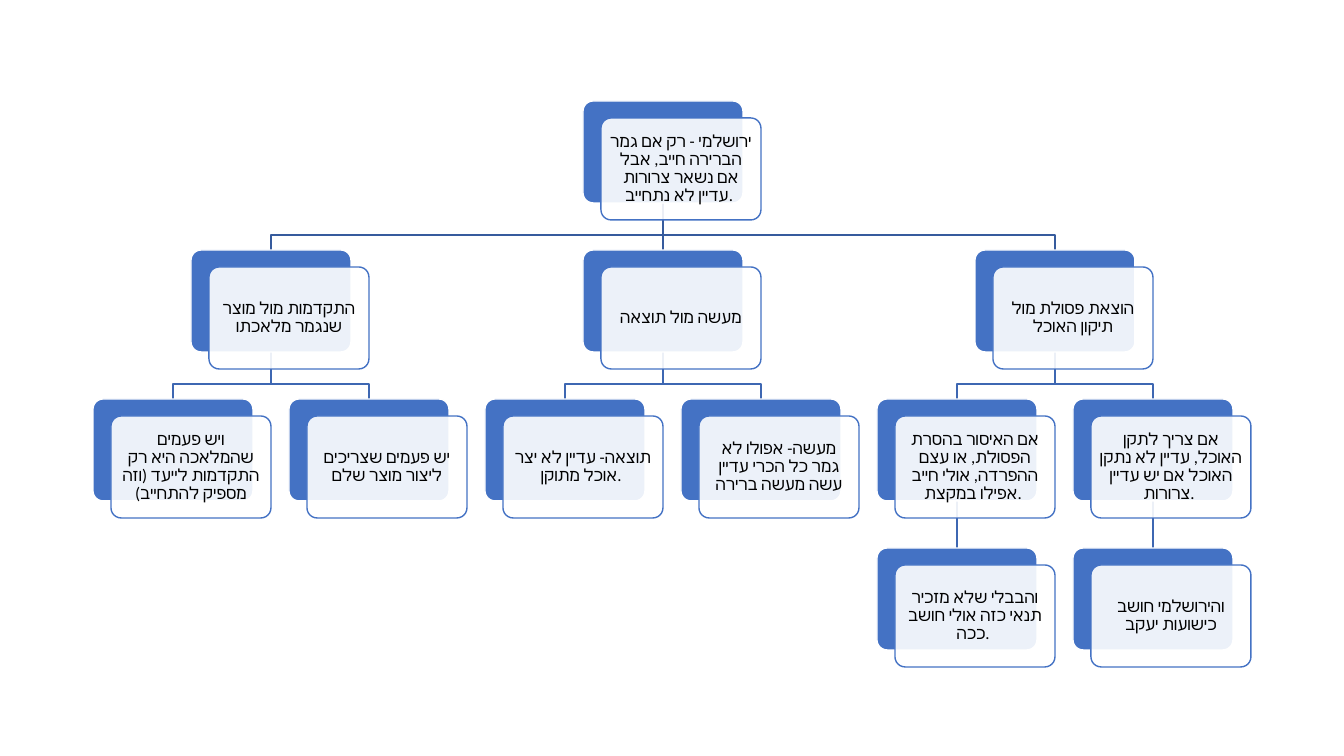
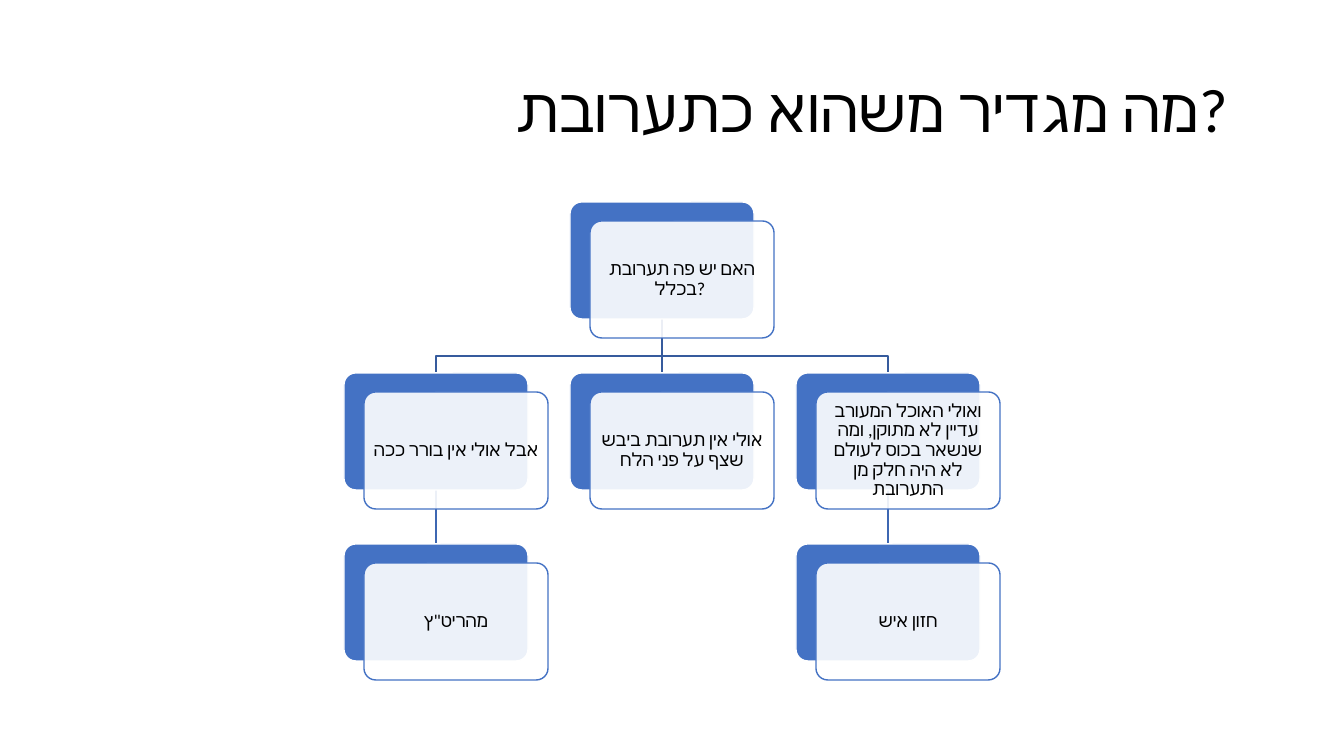
from dataclasses import dataclass

from lxml.etree import SubElement
from pptx import Presentation
from pptx.dml.color import RGBColor as RGB
from pptx.enum.shapes import MSO_CONNECTOR as LINE, MSO_SHAPE as SHAPE
from pptx.enum.text import MSO_ANCHOR as ANCHOR, MSO_AUTO_SIZE as FIT, PP_ALIGN as ALIGN
from pptx.oxml.ns import qn
from pptx.util import Emu, Pt

SCALE = 914400 / 100.8  # EMU in one px


@dataclass(frozen=True)
class Theme:
    font: str = "Calibri"
    title_size: int = 44
    text: str = "000000"
    white: str = "FFFFFF"
    accent: str = "4472C4"
    first_link: str = "365B9D"
    deep_link: str = "3E67B2"
    front_opacity: int = 90
    line: int = 1
    corner: float = 0.1
    inset: int = 5
    spacing: float = 0.9


@dataclass(frozen=True)
class Grid:
    """Places of the boxes in px; bend is how far below a box its links turn."""
    left: int
    top: int
    width: int
    height: int
    col_step: int
    row_step: int
    shift: tuple
    bend: int
    size: int


THEME = Theme()

# Each node is (text, children), children from left to right.
LIABILITY = ("ירושלמי - רק אם גמר הברירה חייב, אבל אם נשאר צרורות עדיין לא נתחייב. ", [
    ("התקדמות מול מוצר שנגמר מלאכתו", [
        ("ויש פעמים שהמלאכה היא רק התקדמות לייעד (וזה מספיק להתחייב)", []),
        ("יש פעמים שצריכים ליצור מוצר שלם", []),
    ]),
    ("מעשה מול תוצאה", [
        ("תוצאה- עדיין לא יצר אוכל מתוקן. ", []),
        ("מעשה- אפולו לא גמר כל הכרי עדיין עשה מעשה ברירה", []),
    ]),
    ("הוצאת פסולת מול תיקון האוכל", [
        ("אם האיסור בהסרת הפסולת, או עצם ההפרדה, אולי חייב אפילו במקצת. ", [
            ("והבבלי שלא מזכיר תנאי כזה אולי חושב ככה. ", []),
        ]),
        ("אם צריך לתקן האוכל, עדיין לא נתקן האוכל אם יש עדיין צרורות. ", [
            ("והירושלמי חושב כישועות יעקב", []),
        ]),
    ]),
])
MIXTURE = ("האם יש פה תערובת בכלל? ", [
    ("אבל אולי אין בורר ככה", [('מהריט"ץ', [])]),
    ("אולי אין תערובת ביבש שצף על פני הלח", []),
    ("ואולי האוכל המעורב עדיין לא מתוקן, ומה שנשאר בכוס לעולם לא היה חלק מן התערובת", [
        ("חזון איש", []),
    ]),
])
SLIDES = [
    (None, LIABILITY, Grid(93, 101, 160, 102, 196, 149, (18, 17), 32, 12)),
    ("מה מגדיר משהוא כתערובת? ", MIXTURE,
     Grid(344, 202, 184, 117, 226, 171, (20, 19), 37, 13)),
]
TITLE_AREA = (93, 40, 1159, 146)


def px(n):
    return Emu(round(n * SCALE))


def write(tf, text, size, align=ALIGN.CENTER, inset=None):
    tf.word_wrap = True
    tf.auto_size = FIT.NONE
    tf.vertical_anchor = ANCHOR.MIDDLE
    if inset is not None:
        tf.margin_left = tf.margin_right = tf.margin_top = tf.margin_bottom = px(inset)
    p = tf.paragraphs[0]
    p.alignment = align
    p.line_spacing = THEME.spacing
    r = p.add_run()
    r.text = text
    r.font.size = Pt(size)
    r.font.name = THEME.font
    r.font.color.rgb = RGB.from_string(THEME.text)
    # Hebrew takes the complex-script font
    SubElement(r.font._element, qn("a:cs"), typeface=THEME.font)


def set_line(sp, color):
    sp.line.color.rgb = RGB.from_string(color)
    sp.line.width = Pt(THEME.line)


def add_card(slide, x, y, grid, fill, line):
    sp = slide.shapes.add_shape(SHAPE.ROUNDED_RECTANGLE,
                                *map(px, (x, y, grid.width, grid.height)))
    sp.adjustments[0] = THEME.corner
    sp.shadow.inherit = False
    sp.fill.solid()
    sp.fill.fore_color.rgb = RGB.from_string(fill)
    set_line(sp, line)
    return sp


def add_box(slide, text, col, row, grid):
    """Draw a solid card with a translucent text card over it; return the solid one."""
    x = grid.left + round(col * grid.col_step)
    y = grid.top + row * grid.row_step
    back = add_card(slide, x, y, grid, THEME.accent, THEME.white)
    front = add_card(slide, x + grid.shift[0], y + grid.shift[1], grid,
                     THEME.white, THEME.accent)
    color = front.fill._xPr.find(qn("a:solidFill"))[0]
    SubElement(color, qn("a:alpha"), val=str(THEME.front_opacity * 1000))
    write(front.text_frame, text, grid.size, inset=THEME.inset)
    return back


def add_link(slide, parent, child, color, grid):
    """Join two boxes behind all the cards, straight down or with two bends."""
    x1, y1 = parent.left + parent.width // 2, parent.top + parent.height
    x2, y2 = child.left + child.width // 2, child.top
    if x1 == x2:
        sp = slide.shapes.add_connector(LINE.STRAIGHT, x1, y1, x2, y2)
        sp.begin_connect(parent, 2)
        sp.end_connect(child, 0)
        SubElement(sp._element.spPr, qn("a:effectLst"))
    else:
        turn = y1 + px(grid.bend)
        path = slide.shapes.build_freeform(x1, y1)
        path.add_line_segments([(x1, turn), (x2, turn), (x2, y2)], close=False)
        sp = path.convert_to_shape()
        sp.fill.background()
        sp.shadow.inherit = False
    set_line(sp, color)
    slide.shapes._spTree.insert(2, sp._element)


def add_tree(slide, node, grid, first_col=0, row=0):
    """Draw a node centred over its children; return its box, column and next free column."""
    text, children = node
    boxes, cols, next_col = [], [], first_col
    for child in children:
        box, col, next_col = add_tree(slide, child, grid, next_col, row + 1)
        boxes.append(box)
        cols.append(col)
    col = (cols[0] + cols[-1]) / 2 if cols else first_col
    parent = add_box(slide, text, col, row, grid)
    for box in boxes:
        add_link(slide, parent, box, THEME.deep_link if row else THEME.first_link, grid)
    return parent, col, max(next_col, first_col + 1)


def add_title(slide, text):
    sp = slide.shapes.title
    sp.left, sp.top, sp.width, sp.height = map(px, TITLE_AREA)
    write(sp.text_frame, text, THEME.title_size, align=ALIGN.RIGHT)


def main():
    prs = Presentation()
    prs.slide_width, prs.slide_height = px(1344), px(756)
    title_only, blank = prs.slide_layouts[5], prs.slide_layouts[6]
    for title, tree, grid in SLIDES:
        slide = prs.slides.add_slide(title_only if title else blank)
        if title:
            add_title(slide, title)
        add_tree(slide, tree, grid)
    prs.save("out.pptx")


if __name__ == "__main__":
    main()
